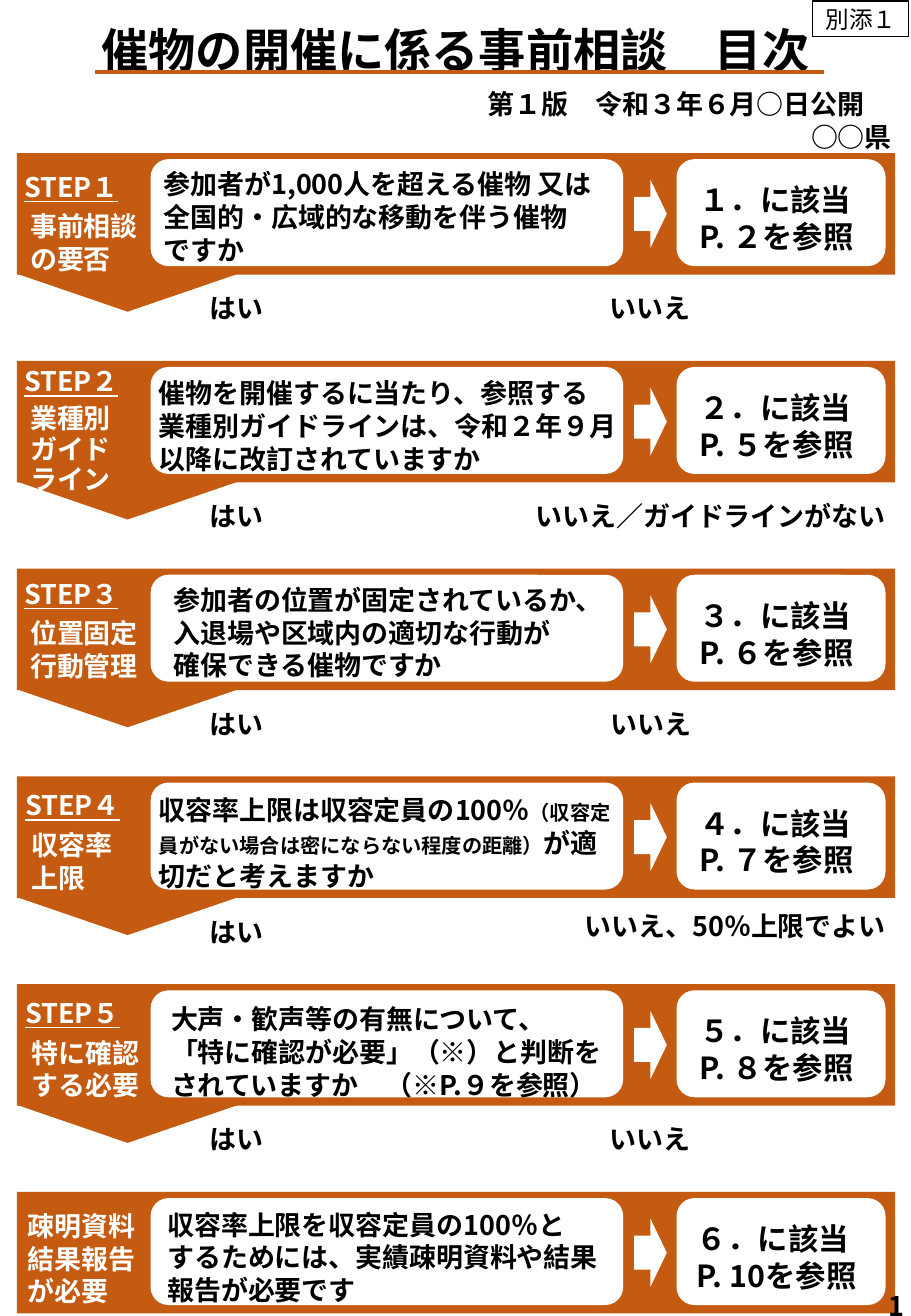
import pptx
import pptx.util
import pptx.dml.color
import pptx.enum.shapes
import pptx.enum.text
from lxml import etree

Inches, Pt = pptx.util.Inches, pptx.util.Pt
SHAPE = pptx.enum.shapes.MSO_SHAPE
ALIGN = pptx.enum.text.PP_ALIGN
A = "http://schemas.openxmlformats.org/drawingml/2006/main"
FONT = "Noto Sans CJK JP"
ORANGE, WHITE, BLACK = "C55A11", "FFFFFF", "000000"
rgb = pptx.dml.color.RGBColor.from_string

prs = pptx.Presentation()
prs.slide_width, prs.slide_height = Inches(7.5), Inches(10.83)
s = prs.slides.add_slide(prs.slide_layouts[6])


def shape(kind, x, y, w, h, color):
    sp = s.shapes.add_shape(kind, Inches(x), Inches(y), Inches(w), Inches(h))
    sp.shadow.inherit = False
    sp.fill.solid()
    sp.fill.fore_color.rgb = rgb(color)
    sp.line.fill.background()
    return sp


def text(tf, paragraphs, size=16, color=BLACK, align=ALIGN.LEFT, font=FONT, bold=True):
    """Each paragraph is a list of (text, size) runs, or a plain string."""
    tf.word_wrap = True
    for i, runs in enumerate(paragraphs):
        p = tf.paragraphs[0] if i == 0 else tf.add_paragraph()
        p.alignment = align
        p.line_spacing = Pt(round(size * 1.21, 1))
        for words, points in [(runs, size)] if isinstance(runs, str) else runs:
            r = p.add_run()
            r.text = words
            r.font.size, r.font.bold, r.font.name = Pt(points), bold, font
            r.font.color.rgb = rgb(color)
            etree.SubElement(r.font._element, f"{{{A}}}ea", typeface=FONT)
    return tf


# Label: left, offset, lines. Question: left, offset, width, paragraphs.
# No answer: left, offset, width, alignment, words.
CENTER, RIGHT = ALIGN.CENTER, ALIGN.RIGHT
steps = [
    ((0.1, 0.09, ["STEP１", " 事前相談", " の要否"]),
     (1.25, 0.07, 3.9, ["参加者が1,000人を超える催物 又は",
                        "全国的・広域的な移動を伴う催物　ですか"]),
     (4.88, 1.09, 0.94, CENTER, "いいえ"), "P. ２を参照"),
    ((0.1, -0.02, ["STEP２", " 業種別", " ガイド", " ライン"]),
     (1.21, 0.08, 4, ["催物を開催するに当たり、参照する",
                      "業種別ガイドラインは、令和２年９月以降に改訂されていますか"]),
     (4.17, 1.09, 3.22, RIGHT, "いいえ／ガイドラインがない"), "P. ５を参照"),
    ((0.1, 0.02, ["STEP３", " 位置固定", " 行動管理"]),
     (1.33, 0.07, 4.08, ["参加者の位置が固定されているか、",
                         "入退場や区域内の適切な行動が", "確保できる催物ですか"]),
     (4.89, 1.09, 0.94, CENTER, "いいえ"), "P. ６を参照"),
    ((0.11, 0.05, ["STEP４", " 収容率", " 上限"]),
     (1.21, 0.09, 3.94, [[("収容率上限は収容定員の100％", 16),
                          ("（収容定員がない場合は密にならない程度の距離）", 12),
                          ("が適切だと考えますか", 16)]]),
     (4.17, 1.04, 3.22, RIGHT, "いいえ、50％上限でよい"), "P. ７を参照"),
    ((0.11, 0.05, ["STEP５", " 特に確認", " する必要"]),
     (1.31, 0.1, 4.01, ["大声・歓声等の有無について、",
                        "「特に確認が必要」（※）と判断を",
                        "されていますか　（※P.９を参照）"]),
     (4.88, 1.09, 0.94, CENTER, "いいえ"), "P. ８を参照"),
    ((0.08, 0.09, [" 疎明資料", " 結果報告", " が必要"]),
     (1.28, 0.08, 3.78, ["収容率上限を収容定員の100％と",
                         "するためには、実績疎明資料や結果報告が必要です"]),
     None, "P. 10を参照"),
]


def box(x, y, w, h):
    return s.shapes.add_textbox(Inches(x), Inches(y), Inches(w), Inches(h)).text_frame


# Title and edition
text(box(0.48, 0.12, 6.54, 0.57), ["催物の開催に係る事前相談　目次"], 28, align=CENTER)
text(box(3.55, 0.67, 3.89, 0.64), ["第１版　令和３年６月○日公開　○○県"], align=RIGHT)

# Steps
for i, (label, question, no_answer, page) in enumerate(steps):
    top = 1.26 + 1.71 * i
    if no_answer:
        pointer = shape(SHAPE.PENTAGON, 0.74, top + 0.09, 0.62, 1.81, ORANGE)
        pointer.rotation = 90
    shape(SHAPE.RECTANGLE, 0.14, top, 7.23, 1, ORANGE)
    for x, w in ((1.24, 3.89), (5.57, 1.72)):
        shape(SHAPE.ROUNDED_RECTANGLE, x, top + 0.05, w, 0.88, WHITE)
    shape(SHAPE.RIGHT_ARROW, 5.22, top + 0.22, 0.27, 0.56, WHITE)

    x, dy, lines = label
    tf = text(box(x, top + dy, 1.19, 0.99), lines, color=WHITE)
    if no_answer:
        tf.paragraphs[0].runs[0].font.underline = True
        tf.paragraphs[0].space_after = Pt(4)
    if len(lines) == 4:
        for p in tf.paragraphs[1:]:
            p.line_spacing = Pt(18)

    x, dy, w, paragraphs = question
    text(box(x, top + dy, w, 0.91), paragraphs)
    x = 5.66 if no_answer else 5.64
    text(box(x, top + 0.18, 1.63, 0.71), ["１２３４５６"[i] + "．に該当", page], 18)
    if no_answer:
        x, dy, w, align, words = no_answer
        text(box(1.48, top + 1.09, 0.94, 0.37), ["はい"], align=CENTER)
        text(box(x, top + dy, w, 0.37), [words], align=align)

# Title rule
rule = s.shapes.add_connector(pptx.enum.shapes.MSO_CONNECTOR.STRAIGHT,
                              Inches(0.78), Inches(0.59), Inches(6.78), Inches(0.59))
rule.line.color.rgb, rule.line.width = rgb(ORANGE), Pt(2.25)
etree.SubElement(rule._element.spPr, f"{{{A}}}effectLst")

# Page number
tf = text(box(7.22, 10.56, 0.28, 0.27), ["1"])
tf.word_wrap = False

# Attachment tag
tag = shape(SHAPE.RECTANGLE, 6.69, 0.01, 0.79, 0.29, WHITE)
tag.fill.background()
tag.line.color.rgb, tag.line.width = rgb(BLACK), Pt(1)
tag.text_frame.vertical_anchor = pptx.enum.text.MSO_ANCHOR.MIDDLE
text(tag.text_frame, ["別添１"], 14, align=RIGHT, font="Calibri", bold=False)

prs.save("out.pptx")
